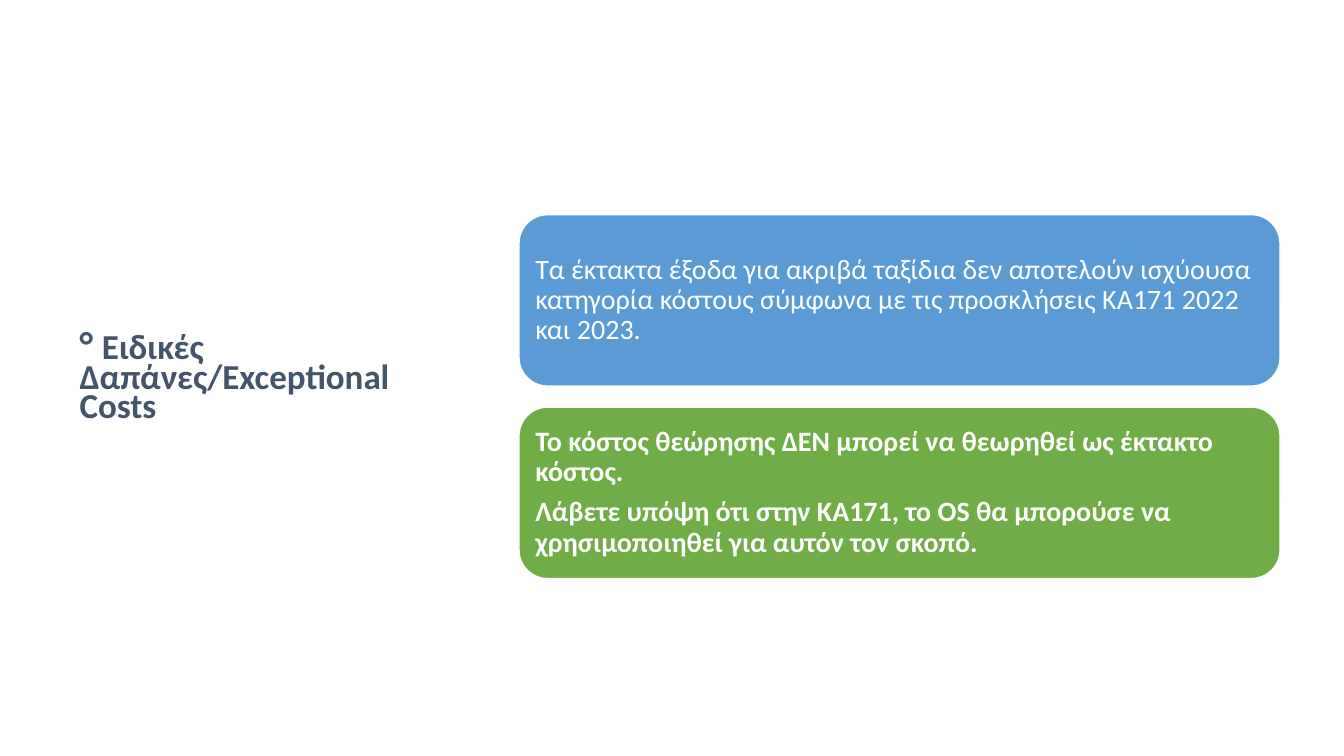
from pptx import Presentation
from pptx.dml.color import RGBColor
from pptx.enum.shapes import MSO_SHAPE
from pptx.enum.text import MSO_ANCHOR, MSO_AUTO_SIZE, PP_ALIGN
from pptx.util import Cm, Pt

WHITE = RGBColor(0xFF, 0xFF, 0xFF)
SLATE = RGBColor(0x44, 0x54, 0x6A)
BLUE = RGBColor(0x5B, 0x9B, 0xD5)
GREEN = RGBColor(0x70, 0xAD, 0x47)

CARDS = [
    (BLUE, False, [
        "Τα έκτακτα έξοδα για ακριβά ταξίδια δεν αποτελούν ισχύουσα κατηγορία "
        "κόστους σύμφωνα με τις προσκλήσεις KA171 2022 και 2023."]),
    (GREEN, True, [
        "Το κόστος θεώρησης ΔΕΝ μπορεί να θεωρηθεί ως έκτακτο κόστος.",
        "Λάβετε υπόψη ότι στην KA171, το OS θα μπορούσε να χρησιμοποιηθεί "
        "για αυτόν τον σκοπό."]),
]


def style(run, size, color, bold):
    font = run.font
    font.name = "Calibri"
    font.size = Pt(size)
    font.bold = bold
    font.color.rgb = color


def add_title(slide, left, top, width, height):
    title = slide.shapes.title
    title.left, title.top = left, top
    title.width, title.height = width, height
    frame = title.text_frame
    frame.word_wrap = True
    frame.auto_size = MSO_AUTO_SIZE.NONE
    frame.vertical_anchor = MSO_ANCHOR.MIDDLE
    para = frame.paragraphs[0]
    para.alignment = PP_ALIGN.LEFT
    para.line_spacing = 0.7
    para.space_after = Pt(6)
    for text, size in (("° ", 28), ("Ειδικές Δαπάνες/Exceptional Costs", 25)):
        run = para.add_run()
        run.text = text
        style(run, size, SLATE, True)


def add_card(slide, left, top, width, height, fill, bold, lines):
    card = slide.shapes.add_shape(
        MSO_SHAPE.ROUNDED_RECTANGLE, left, top, width, height)
    card.shadow.inherit = False
    card.fill.solid()
    card.fill.fore_color.rgb = fill
    card.line.color.rgb = WHITE
    card.line.width = Pt(1)
    frame = card.text_frame
    frame.word_wrap = True
    frame.vertical_anchor = MSO_ANCHOR.MIDDLE
    frame.margin_left = frame.margin_right = Cm(0.2)
    frame.margin_top = frame.margin_bottom = Cm(0.2)
    frame.text = "\n".join(lines)
    for para in frame.paragraphs:
        para.alignment = PP_ALIGN.LEFT
        para.line_spacing = 0.9
        para.space_after = Pt(7)
        style(para.runs[0], 20, WHITE, bold)


def add_cards(slide, left, top, width, height, gap):
    # Equal cards stacked to fill the box
    tall = (height - gap * (len(CARDS) - 1)) // len(CARDS)
    for i, (fill, bold, lines) in enumerate(CARDS):
        add_card(slide, left, top + i * (tall + gap), width, tall,
                 fill, bold, lines)


def main():
    deck = Presentation()
    deck.slide_width, deck.slide_height = Cm(33.87), Cm(19.05)
    slide = deck.slides.add_slide(deck.slide_layouts[5])
    # Heading on the left
    add_title(slide, Cm(1.75), Cm(1.78), Cm(9.5), Cm(15.52))
    # Cost notes on the right
    add_cards(slide, Cm(13.08), Cm(5.41), Cm(19.18), Cm(9.17), Cm(0.53))
    deck.save("out.pptx")


if __name__ == "__main__":
    main()
